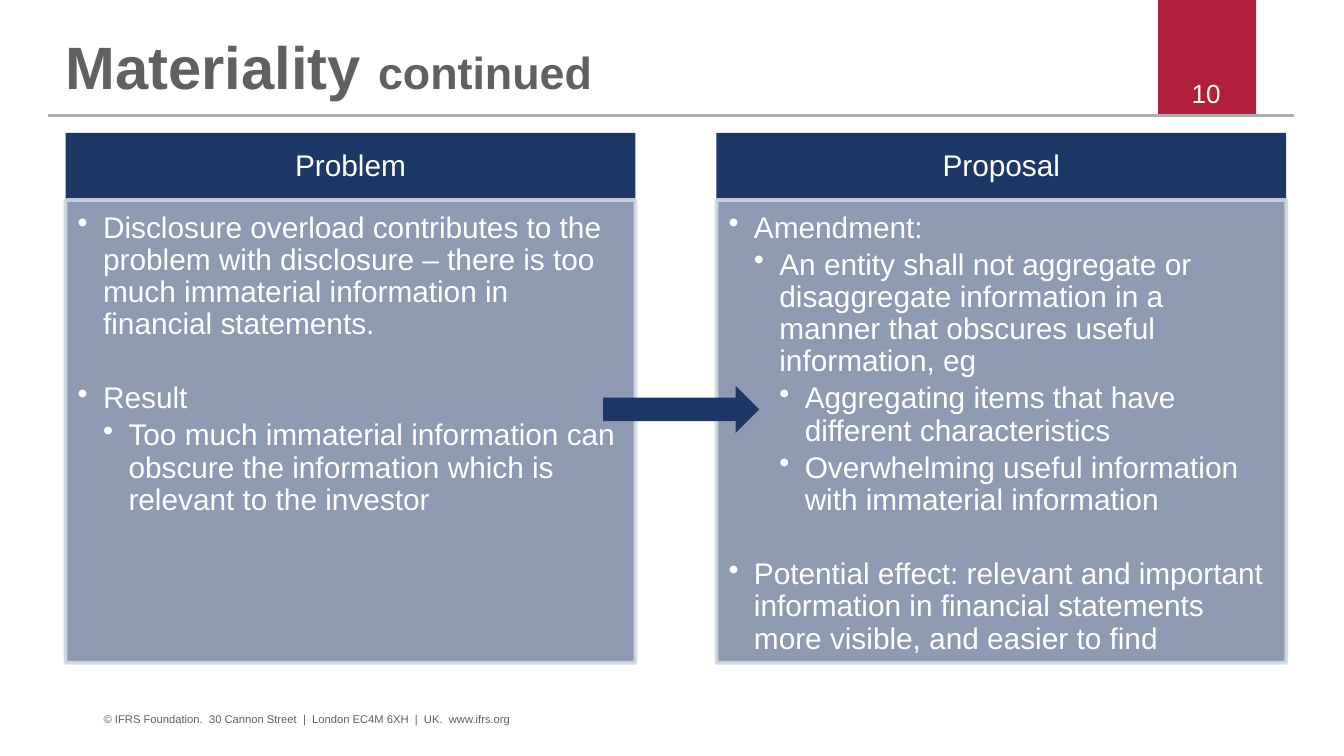
from lxml import etree
from pptx import Presentation
from pptx import util as u
from pptx.dml.color import RGBColor
from pptx.enum import shapes, text
from pptx.oxml.ns import qn

# Content: each bullet is (level, wording, starts a new group)
TITLE = [("Materiality ", 32), ("continued", 24)]
PAGE_NUMBER = "10"
FOOTER = "© IFRS Foundation.  30 Cannon Street  |  London EC4M 6XH  |  UK.  www.ifrs.org"
COLUMNS = [
    ("Problem", [
        (1, "Disclosure overload contributes to the problem with disclosure – there is too "
            "much immaterial information in financial statements.", False),
        (1, "Result", True),
        (2, "Too much immaterial information can obscure the information which is "
            "relevant to the investor", False),
    ]),
    ("Proposal", [
        (1, "Amendment:", False),
        (2, "An entity shall not aggregate or disaggregate information in a manner that "
            "obscures useful information, eg", False),
        (3, "Aggregating items that have different characteristics", False),
        (3, "Overwhelming useful information with immaterial information", False),
        (1, "Potential effect: relevant and important information in financial statements "
            "more visible, and easier to find", True),
    ]),
]

# Format, lengths in cm
COLORS = {"navy": "1D3766", "red": "B31E3B", "grey": "5F6062", "rule": "AFAFB0",
          "edge": "CFD9E2", "white": "FFFFFF"}
LEFT, TOP, WIDTH, STEP = 1.24, 2.51, 10.77, 12.3
HEAD_HEIGHT, BODY_HEIGHT = 1.27, 8.74
INDENT = 0.48
GROUP_GAP = 19.8
BULLET = {"line_spacing": 0.9, "space_after": u.Pt(2.6)}
SIDES = ("margin_left", "margin_top", "margin_right", "margin_bottom")

deck = Presentation()
deck.slide_width, deck.slide_height = u.Cm(25.4), u.Cm(14.28)
page = deck.slides.add_slide(deck.slide_layouts[6])


def set_all(item, values):
    for name, value in values.items():
        setattr(item, name, value)


def color(name):
    return RGBColor.from_string(COLORS[name])


def set_alpha(fill, percent):
    node = fill._xPr.find(qn("a:solidFill"))[0]
    etree.SubElement(node, qn("a:alpha"), val=str(percent * 1000))


def add_block(kind, place, fill):
    shape = page.shapes.add_shape(kind, *map(u.Cm, place))
    shape.shadow.inherit = False
    shape.fill.solid()
    shape.fill.fore_color.rgb = color(fill)
    shape.line.fill.background()
    return shape


def set_frame(shape, anchor=text.MSO_ANCHOR.TOP, margins=(0, 0, 0, 0)):
    frame = shape.text_frame
    set_all(frame, {"word_wrap": True, "vertical_anchor": anchor})
    set_all(frame, dict(zip(SIDES, map(u.Cm, margins))))
    return frame


def add_span(para, words, size, tint="white", bold=False):
    span = para.add_run()
    span.text = words
    set_all(span.font, {"name": "Arial", "size": u.Pt(size), "bold": bold})
    span.font.color.rgb = color(tint)


def add_box(place, spans, tint, align=text.PP_ALIGN.LEFT, bold=False, spacing=1.0,
            anchor=text.MSO_ANCHOR.TOP):
    box = page.shapes.add_textbox(*map(u.Cm, place))
    para = set_frame(box, anchor).paragraphs[0]
    set_all(para, {"alignment": align, "line_spacing": spacing})
    for words, size in spans:
        add_span(para, words, size, tint, bold)


def add_bullet(para, level, words, new_group):
    props = para._p.get_or_add_pPr()
    props.set("marL", str(u.Cm(INDENT * level)))
    props.set("indent", str(-u.Cm(INDENT)))
    etree.SubElement(props, qn("a:buChar"), char="•")
    set_all(para, BULLET | {"alignment": text.PP_ALIGN.LEFT})
    if new_group:
        para.space_before = u.Pt(GROUP_GAP)
    add_span(para, words, 16)


# Page tab, rule, title and footer
add_block(shapes.MSO_SHAPE.RECTANGLE, (21.89, 0, 1.85, 2.18), "red")
rule = page.shapes.add_connector(shapes.MSO_CONNECTOR.STRAIGHT,
                                 *map(u.Cm, (0.91, 2.18, 24.46, 2.18)))
rule.line.color.rgb = color("rule")
rule.line.width = u.Pt(1.2)
etree.SubElement(rule._element.spPr, qn("a:effectLst"))
add_box((1.96, 13.46, 15.7, 0.41), [(FOOTER, 6)], "grey")
add_box((21.92, 1.47, 1.75, 0.41), [(PAGE_NUMBER, 14)], "white", text.PP_ALIGN.CENTER)
add_box((LEFT, 0.69, 17.37, 1.24), TITLE, "grey", bold=True, spacing=0.9,
        anchor=text.MSO_ANCHOR.BOTTOM)

# Two columns: heading bar above a bulleted panel
for number, (heading, bullets) in enumerate(COLUMNS):
    left = LEFT + number * STEP
    head = add_block(shapes.MSO_SHAPE.RECTANGLE, (left, TOP, WIDTH, HEAD_HEIGHT), "navy")
    para = set_frame(head, text.MSO_ANCHOR.MIDDLE, (0.3, 0.18, 0.3, 0.18)).paragraphs[0]
    set_all(para, {"alignment": text.PP_ALIGN.CENTER, "line_spacing": 0.9})
    add_span(para, heading, 16)

    panel = add_block(shapes.MSO_SHAPE.RECTANGLE,
                      (left, TOP + HEAD_HEIGHT, WIDTH, BODY_HEIGHT), "navy")
    set_alpha(panel.fill, 50)
    panel.line.color.rgb = color("edge")
    panel.line.width = u.Pt(2)
    set_alpha(panel.line.fill, 90)
    frame = set_frame(panel, margins=(0.23, 0.23, 0.3, 0.36))
    for index, bullet in enumerate(bullets):
        add_bullet(frame.add_paragraph() if index else frame.paragraphs[0], *bullet)

# Arrow from problem to proposal
add_block(shapes.MSO_SHAPE.RIGHT_ARROW, (11.4, 7.29, 2.95, 0.89), "navy")

deck.save("out.pptx")
